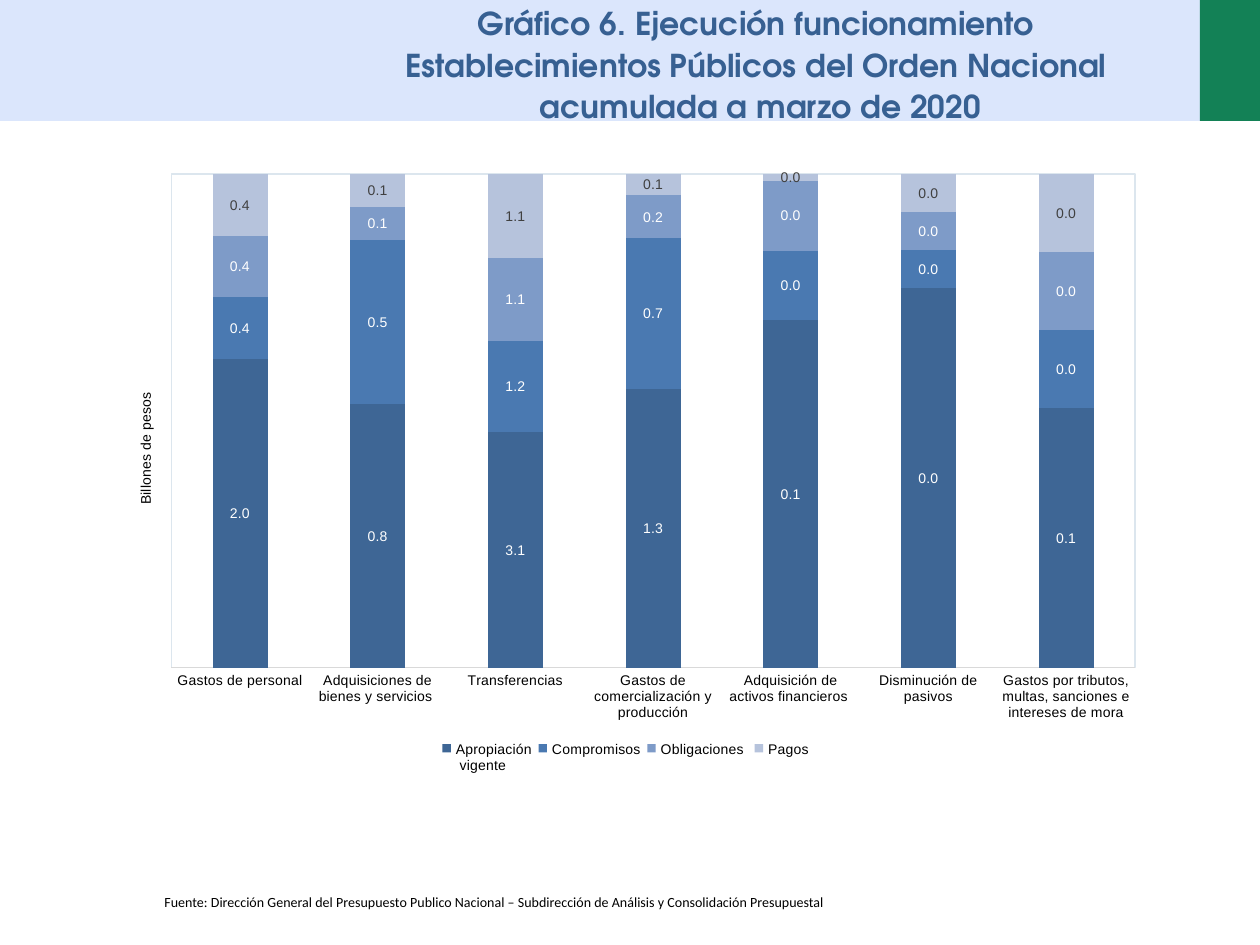
import pptx
import pptx.util
import pptx.chart.data
import pptx.dml.color
import pptx.enum.chart
import pptx.enum.shapes
import pptx.enum.text
import pptx.oxml
import pptx.oxml.ns

PX = 914400 / 126
COLORS = {"green": "138156", "band": "DBE6FC", "title": "376092", "black": "000000",
          "white": "FFFFFF", "gray": "404040", "axis": "D9D9D9", "frame": "DCE6EE"}
BANDS = [("green", (1200, 0, 60, 121)), ("band", (0, 0, 1200, 121))]
TITLE = ["Gráfico 6. Ejecución funcionamiento ",
         "Establecimientos Públicos del Orden Nacional ",
         "acumulada a marzo de 2020"]
TITLE_BOX = (335, -6, 851, 162)
SOURCE = ("Fuente: Dirección General del Presupuesto Publico Nacional – "
          "Subdirección de Análisis y Consolidación Presupuestal")
SOURCE_BOX = (152, 887, 990, 30)

CHART_BOX = (105, 161, 1051, 622)
PLOT_BOX = (171, 174, 964, 494)
LEGEND_BOX = (436, 746, 384, 34)
AXIS_TITLE_AT = (133, 389)
AXIS_TITLE = "Billones de pesos"
NUMBER_FORMAT = r'_ * #,##0.0_ ;_ * \-#,##0.0_ ;_ * "-"??_'
CATEGORIES = ["Gastos de personal", "Adquisiciones de bienes y servicios ", "Transferencias",
              "Gastos de comercialización y producción", "Adquisición de activos financieros ",
              "Disminución de pasivos",
              "Gastos por tributos, multas, sanciones e intereses de mora"]
# Amounts labelled 0.0 keep one significant digit so that their bars have a height.
SERIES = [
    ("Apropiación\n vigente ", [2, 0.8, 3.1, 1.3, 0.1, 0.01, 0.1], "3E6695", "white"),
    ("Compromisos", [0.4, 0.5, 1.2, 0.7, 0.02, 0.001, 0.03], "4A79B1", "white"),
    ("Obligaciones ", [0.4, 0.1, 1.1, 0.2, 0.02, 0.001, 0.03], "7E9BC8", "white"),
    ("Pagos ", [0.4, 0.1, 1.1, 0.1, 0.002, 0.001, 0.03], "B6C3DC", "gray"),
]


def emu(box):
    return [round(v * PX) for v in box]


def rgb(name):
    return pptx.dml.color.RGBColor.from_string(COLORS.get(name, name))


def style_font(font, size=8, name="Arial", color="black", bold=False):
    font.size = pptx.util.Pt(size)
    font.name = name
    font.bold = bold
    font.color.rgb = rgb(color)


def write(tf, lines, align=None, spacing=None, **font):
    tf.word_wrap = True
    for i, line in enumerate(lines):
        p = tf.paragraphs[0] if i == 0 else tf.add_paragraph()
        p.alignment = align
        p.line_spacing = spacing
        r = p.add_run()
        r.text = line
        style_font(r.font, **font)


def layout_xml(box, inner=False):
    """Manual layout of a chart part, as fractions of the chart's box."""
    left, top, width, height = CHART_BOX
    values = [(box[0] - left) / width, (box[1] - top) / height]
    values += [v / whole for v, whole in zip(box[2:], (width, height))]
    parts = '<c:layoutTarget val="inner"/>' if inner else ""
    parts += '<c:xMode val="edge"/><c:yMode val="edge"/>'
    parts += "".join(f'<c:{k} val="{v:.3f}"/>' for k, v in zip("xywh", values))
    return pptx.oxml.parse_xml(
        f'<c:layout {pptx.oxml.ns.nsdecls("c")}><c:manualLayout>{parts}</c:manualLayout></c:layout>')


def place(element, layout, after=None):
    """Put the layout first in a chart part, or after the named child."""
    tag = pptx.oxml.ns.qn
    for old in element.findall(tag("c:layout")):
        element.remove(old)
    before = element.find(tag(after)) if after else None
    element.insert(0 if before is None else element.index(before) + 1, layout)


def add_bands(s):
    for color, box in BANDS:
        sp = s.shapes.add_shape(pptx.enum.shapes.MSO_SHAPE.RECTANGLE, *emu(box))
        sp.shadow.inherit = False
        sp.fill.solid()
        sp.fill.fore_color.rgb = rgb(color)
        sp.line.fill.background()
        s.slide_layout.shapes._spTree.insert(2, sp._element)


def add_chart(s):
    data = pptx.chart.data.CategoryChartData(number_format=NUMBER_FORMAT)
    data.categories = CATEGORIES
    for name, values, *_ in SERIES:
        data.add_series(name, values)
    chart = s.shapes.add_chart(pptx.enum.chart.XL_CHART_TYPE.COLUMN_STACKED_100,
                               *emu(CHART_BOX), data).chart
    style_font(chart.font)
    chart.has_title = False

    plot = chart.plots[0]
    plot.gap_width, plot.overlap = 150, 100
    plot.vary_by_categories = False
    for series, (_, _, fill, label_color) in zip(plot.series, SERIES):
        series.format.fill.solid()
        series.format.fill.fore_color.rgb = rgb(fill)
        labels = series.data_labels
        labels.show_value = True
        labels.number_format = NUMBER_FORMAT
        labels.number_format_is_linked = False
        labels.position = pptx.enum.chart.XL_LABEL_POSITION.CENTER
        style_font(labels.font, color=label_color)

    cat = chart.category_axis
    cat.major_tick_mark = pptx.enum.chart.XL_TICK_MARK.NONE
    cat.format.line.color.rgb = rgb("axis")
    cat.format.line.width = pptx.util.Pt(0.75)
    style_font(cat.tick_labels.font)

    val = chart.value_axis
    val.has_major_gridlines = False
    val.visible = False
    val.tick_labels.number_format = NUMBER_FORMAT
    val.tick_labels.number_format_is_linked = False
    tf = val.axis_title.text_frame
    write(tf, [AXIS_TITLE])
    tf._txBody.bodyPr.set("rot", "-5400000")
    place(val.axis_title._element, layout_xml(AXIS_TITLE_AT), after="c:tx")

    chart.has_legend = True
    chart.legend.position = pptx.enum.chart.XL_LEGEND_POSITION.BOTTOM
    chart.legend.include_in_layout = False
    style_font(chart.legend.font)
    place(chart.legend._element, layout_xml(LEGEND_BOX), after="c:legendPos")

    area = chart._chartSpace.chart.plotArea
    place(area, layout_xml(PLOT_BOX, inner=True))
    area.append(pptx.oxml.parse_xml(
        f'<c:spPr {pptx.oxml.ns.nsdecls("c", "a")}>'
        f'<a:solidFill><a:srgbClr val="{COLORS["white"]}"/></a:solidFill><a:ln w="9525">'
        f'<a:solidFill><a:srgbClr val="{COLORS["frame"]}"/></a:solidFill></a:ln></c:spPr>'))


def main():
    prs = pptx.Presentation()
    prs.slide_width, prs.slide_height = pptx.util.Inches(10), pptx.util.Inches(7.5)
    s = prs.slides.add_slide(prs.slide_layouts[5])
    add_bands(s)

    title = s.shapes.title
    title.left, title.top, title.width, title.height = emu(TITLE_BOX)
    tf = title.text_frame
    tf.auto_size = pptx.enum.text.MSO_AUTO_SIZE.NONE
    tf.vertical_anchor = pptx.enum.text.MSO_ANCHOR.TOP
    write(tf, TITLE, align=pptx.enum.text.PP_ALIGN.CENTER, spacing=1.1,
          size=18, name="TeX Gyre Adventor", color="title", bold=True)

    source = s.shapes.add_textbox(*emu(SOURCE_BOX)).text_frame
    source.auto_size = pptx.enum.text.MSO_AUTO_SIZE.SHAPE_TO_FIT_TEXT
    write(source, [SOURCE], name="Calibri")

    add_chart(s)
    prs.save("out.pptx")


if __name__ == "__main__":
    main()
